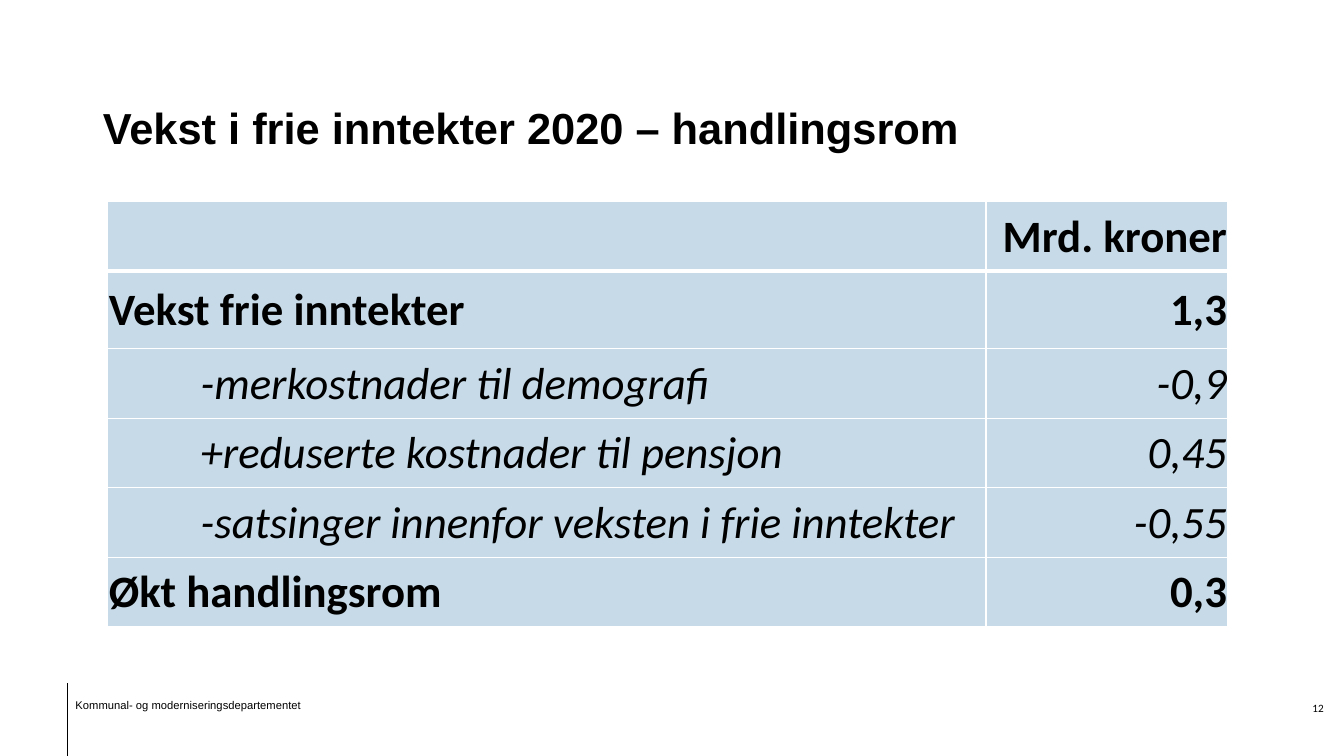
"""Builds the slide on growth in free income and room for manoeuvre in 2020."""
from lxml import etree
from pptx import Presentation
from pptx import util as u
from pptx.dml.color import RGBColor
from pptx.enum import shapes, text
from pptx.oxml import parse_xml

PX = 9144
NS = "http://schemas.openxmlformats.org/drawingml/2006/main"
HUES = {"ink": "000000", "cell": "C6DAE7", "edge": "FFFFFF"}
LEFT, RIGHT = text.PP_ALIGN.LEFT, text.PP_ALIGN.RIGHT


def box(*lens):
    return [u.Emu(n * PX) for n in lens]


def style(par, face, size, bold=False, slant=False, align=LEFT):
    par.alignment = align
    for run in par.runs:
        font = run.font
        font.name, font.size = face, u.Pt(size)
        font.bold, font.italic = bold, slant
        font.color.rgb = RGBColor.from_string(HUES["ink"])


deck = Presentation()
deck.slide_width, deck.slide_height = box(1333, 750)
slide = deck.slides.add_slide(deck.slide_layouts[5])

title = slide.shapes.title
title.left, title.top, title.width, title.height = box(92, 32, 1063, 125)
frame = title.text_frame
frame.text = "Vekst i frie inntekter 2020 – handlingsrom"
frame.auto_size = text.MSO_AUTO_SIZE.NONE
frame.vertical_anchor = text.MSO_ANCHOR.BOTTOM
style(frame.paragraphs[0], "Arial", 31, bold=True)

rows = [
    ("", "Mrd. kroner"),
    ("Vekst frie inntekter", "1,3"),
    ("-merkostnader til demografi", "-0,9"),
    ("+reduserte kostnader til pensjon", "0,45"),
    ("-satsinger innenfor veksten i frie inntekter", "-0,55"),
    ("Økt handlingsrom", "0,3"),
]
grid = slide.shapes.add_table(len(rows), 2, *box(107, 200, 1111, 422)).table
for col, wide in zip(grid.columns, box(871, 240)):
    col.width = wide
for row, tall in zip(grid.rows, box(69, 77, 69, 69, 69, 69)):
    row.height = tall

for r, row in enumerate(rows):
    part = 2 <= r <= 4
    for c, word in enumerate(row):
        cell = grid.cell(r, c)
        cell.text = word
        cell.vertical_anchor = text.MSO_ANCHOR.MIDDLE
        cell.margin_left, cell.margin_top, cell.margin_right, cell.margin_bottom = box(1, 1, 1, 0)
        par = cell.text_frame.paragraphs[0]
        style(par, "Calibri", 32, not part, part, RIGHT if c else LEFT)
        if part and c == 0:
            par._p.get_or_add_pPr().set("marL", str(91 * PX))
        props = cell._tc.get_or_add_tcPr()
        for side in "LRTB":
            thick = (r, side) in ((0, "B"), (1, "T"))
            props.append(parse_xml(
                f'<a:ln{side} xmlns:a="{NS}" w="{u.Pt(3 if thick else 1)}"><a:solidFill>'
                f'<a:srgbClr val="{HUES["edge"]}"/></a:solidFill></a:ln{side}>'))
        cell.fill.solid()
        cell.fill.fore_color.rgb = RGBColor.from_string(HUES["cell"])

rule = slide.shapes.add_connector(shapes.MSO_CONNECTOR.STRAIGHT, *box(67, 678, 67, 750))
rule.line.width = u.Pt(0.75)
rule.line.color.rgb = RGBColor.from_string(HUES["ink"])
etree.SubElement(rule._element.spPr, f"{{{NS}}}effectLst")

notes = [
    ("Kommunal- og moderniseringsdepartementet", (65, 689, 283, 22), "Arial", LEFT, 10, 0.9),
    ("12", (1264, 691, 49, 39), "Calibri", RIGHT, 0, 1.0),
]
for word, place, face, align, inset, gap in notes:
    frame = slide.shapes.add_textbox(*box(*place)).text_frame
    frame.word_wrap = True
    frame.margin_right = u.Emu(inset * PX)
    frame.text = word
    frame.paragraphs[0].line_spacing = gap
    style(frame.paragraphs[0], face, 8, align=align)

deck.save("out.pptx")
